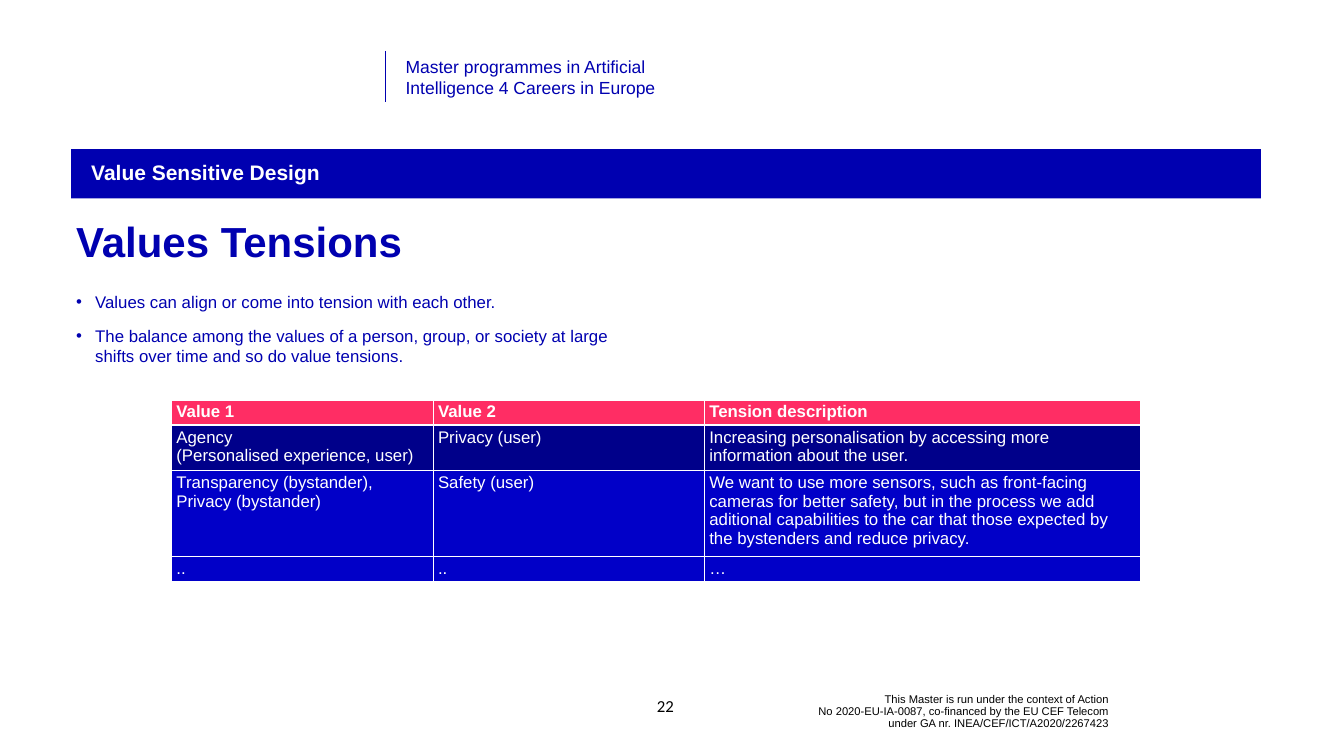
from copy import deepcopy
from dataclasses import dataclass

from lxml import etree
from pptx import Presentation
from pptx.dml.color import RGBColor
from pptx.enum.shapes import MSO_CONNECTOR, MSO_SHAPE
from pptx.enum.text import MSO_ANCHOR, MSO_AUTO_SIZE, PP_ALIGN
from pptx.oxml.ns import qn
from pptx.util import Inches, Pt

LEFT, CENTER, RIGHT = PP_ALIGN.LEFT, PP_ALIGN.CENTER, PP_ALIGN.RIGHT
TOP, MIDDLE = MSO_ANCHOR.TOP, MSO_ANCHOR.MIDDLE
RECTANGLE, STRAIGHT = MSO_SHAPE.RECTANGLE, MSO_CONNECTOR.STRAIGHT
NO_AUTOFIT = MSO_AUTO_SIZE.NONE
TITLE_ONLY = 5
COLUMN, ROW = Inches(26.67) / 100, Inches(15) / 100


@dataclass(frozen=True)
class Theme:
    """Colours, fonts and type sizes of the slide."""
    blue: str = "0000B0"
    pink: str = "FF2D64"
    dark_row: str = "00008A"
    bright_row: str = "0100C8"
    white: str = "FFFFFF"
    black: str = "000000"
    font: str = "Arial"
    number_font: str = "Calibri"
    title: int = 60
    section: int = 30
    programme: int = 25
    body: int = 24
    funding: int = 16


@dataclass(frozen=True)
class Box:
    """A rectangle measured in columns and rows of a 100 by 100 grid."""
    left: float
    top: float
    width: float
    height: float

    def place(self):
        """Return left, top, width and height as slide lengths."""
        return (round(self.left * COLUMN), round(self.top * ROW),
                round(self.width * COLUMN), round(self.height * ROW))


THEME = Theme()
TABLE_ROWS = [
    (0.46, THEME.pink, ["Value 1", "Value 2", "Tension description"]),
    (0.84, THEME.dark_row, [
        ["Agency", "(Personalised experience, user)"], "Privacy (user)",
        "Increasing personalisation by accessing more information about the user."]),
    (1.59, THEME.bright_row, [
        ["Transparency (bystander),", "Privacy (bystander)"], "Safety (user)",
        "We want to use more sensors, such as front-facing cameras for better safety, "
        "but in the process we add aditional capabilities to the car that those "
        "expected by the bystenders and reduce privacy."]),
    (0.46, THEME.bright_row, ["..", "..", "…"]),
]


def add_bullet(paragraph, indent):
    """Give a paragraph a round bullet and a hanging indent."""
    properties = paragraph._p.get_or_add_pPr()
    properties.set("marL", str(Inches(indent)))
    properties.set("indent", str(-Inches(indent)))
    etree.SubElement(properties, qn("a:buFont")).set("typeface", "Arial")
    etree.SubElement(properties, qn("a:buChar")).set("char", "•")


def write_text(frame, text, size=THEME.body, color=THEME.blue, font=THEME.font, bold=False,
               align=LEFT, anchor=TOP, spacing=None, gap=0, bullet_indent=None):
    """Fill a text frame with one text or a list of paragraphs."""
    frame.word_wrap = True
    frame.vertical_anchor = anchor
    texts = [text] if isinstance(text, str) else text
    for index, line in enumerate(texts):
        paragraph = frame.add_paragraph() if index else frame.paragraphs[0]
        paragraph.text = line
        paragraph.alignment = align
        paragraph.space_before = Pt(gap if index else 0)
        if spacing:
            paragraph.line_spacing = spacing
        if bullet_indent:
            add_bullet(paragraph, bullet_indent)
        for run in paragraph.runs:
            run.font.name, run.font.size, run.font.bold = font, Pt(size), bold
            run.font.color.rgb = RGBColor.from_string(color)
        for line_break in paragraph._p.findall(qn("a:br")):
            line_break.append(deepcopy(paragraph.runs[0]._r.rPr))


def add_text(slide, box, text, **text_format):
    """Add a text box that fills the given box."""
    shape = slide.shapes.add_textbox(*box.place())
    write_text(shape.text_frame, text, **text_format)


def add_header(slide, box):
    """Place the divider on the left edge and the programme name beside it."""
    left, top, _, height = box.place()
    divider = slide.shapes.add_connector(STRAIGHT, left, top, left, top + height)
    divider.line.color.rgb = RGBColor.from_string(THEME.blue)
    divider.line.width = Pt(0.5)
    etree.SubElement(divider._element.spPr, qn("a:effectLst"))
    name_box = Box(box.left + 1.13, box.top + 0.33, box.width - 1.13, box.height - 0.53)
    add_text(slide, name_box,
             "Master programmes in Artificial\nIntelligence 4 Careers in Europe",
             size=THEME.programme)


def add_section_bar(slide, box, text):
    """Place the filled bar with the section name."""
    bar = slide.shapes.add_shape(RECTANGLE, *box.place())
    bar.shadow.inherit = False
    bar.fill.solid()
    bar.fill.fore_color.rgb = RGBColor.from_string(THEME.blue)
    bar.line.fill.background()
    bar.text_frame.margin_left = Inches(0.4)
    write_text(bar.text_frame, text, size=THEME.section, color=THEME.white, bold=True,
               anchor=MIDDLE, spacing=0.9)


def set_title(slide, box, text):
    """Move and format the title placeholder."""
    title = slide.shapes.title
    title.left, title.top, title.width, title.height = box.place()
    title.text_frame.auto_size = NO_AUTOFIT
    write_text(title.text_frame, text, size=THEME.title, bold=True, spacing=Pt(70))


def set_borders(cell, **widths):
    """Draw white cell borders, one point wide unless a side is named."""
    properties = cell._tc.get_or_add_tcPr()
    for index, side in enumerate("LRTB"):
        border = etree.Element(qn(f"a:ln{side}"), w=str(Pt(widths.get(side, 1))))
        fill = etree.SubElement(border, qn("a:solidFill"))
        etree.SubElement(fill, qn("a:srgbClr")).set("val", THEME.white)
        properties.insert(index, border)


def add_tension_table(slide, box, rows, column_shares):
    """Place the table of value tensions."""
    frame = slide.shapes.add_table(len(rows), len(column_shares), *box.place())
    table = frame.table
    table.horz_banding = False
    for column, share in zip(table.columns, column_shares):
        column.width = round(box.width * COLUMN * share)
    for index, (height, fill, texts) in enumerate(rows):
        table.rows[index].height = Inches(height)
        for cell, text in zip(table.rows[index].cells, texts):
            cell.fill.solid()
            cell.fill.fore_color.rgb = RGBColor.from_string(fill)
            set_borders(cell, **{0: {"B": 3}, 1: {"T": 3}}.get(index, {}))
            write_text(cell.text_frame, text, color=THEME.white, bold=index == 0)


def add_footer(slide, number_box, funding_box):
    """Place the slide number and the funding statement."""
    add_text(slide, number_box, "22", font=THEME.number_font, color=THEME.black,
             align=CENTER, anchor=MIDDLE)
    add_text(slide, funding_box,
             "This Master is run under the context of Action\n"
             "No 2020-EU-IA-0087, co-financed by the EU CEF Telecom\n"
             "under GA nr. INEA/CEF/ICT/A2020/2267423",
             size=THEME.funding, color=THEME.black, align=RIGHT, anchor=MIDDLE, spacing=0.9)


def main():
    """Build the slide and save it."""
    presentation = Presentation()
    presentation.slide_width, presentation.slide_height = round(COLUMN * 100), round(ROW * 100)
    slide = presentation.slides.add_slide(presentation.slide_layouts[TITLE_ONLY])
    add_header(slide, Box(28.68, 6.73, 25.01, 6.8))
    add_section_bar(slide, Box(5.29, 19.73, 88.53, 6.53), "Value Sensitive Design")
    set_title(slide, Box(5.29, 28.4, 88.53, 8.27), "Values Tensions")
    add_text(slide, Box(5.29, 38.27, 42.63, 47.07), [
        "Values can align or come into tension with each other.",
        "The balance among the values of a person, group, or society at large shifts "
        "over time and so do value tensions."], gap=20, bullet_indent=0.38)
    add_tension_table(slide, Box(12.75, 52.93, 72.1, 22.33), TABLE_ROWS, [0.27, 0.28, 0.45])
    add_footer(slide, Box(47.43, 90.73, 4.16, 5.33), Box(56.32, 91.6, 26.55, 5.07))
    presentation.save("out.pptx")


if __name__ == "__main__":
    main()
